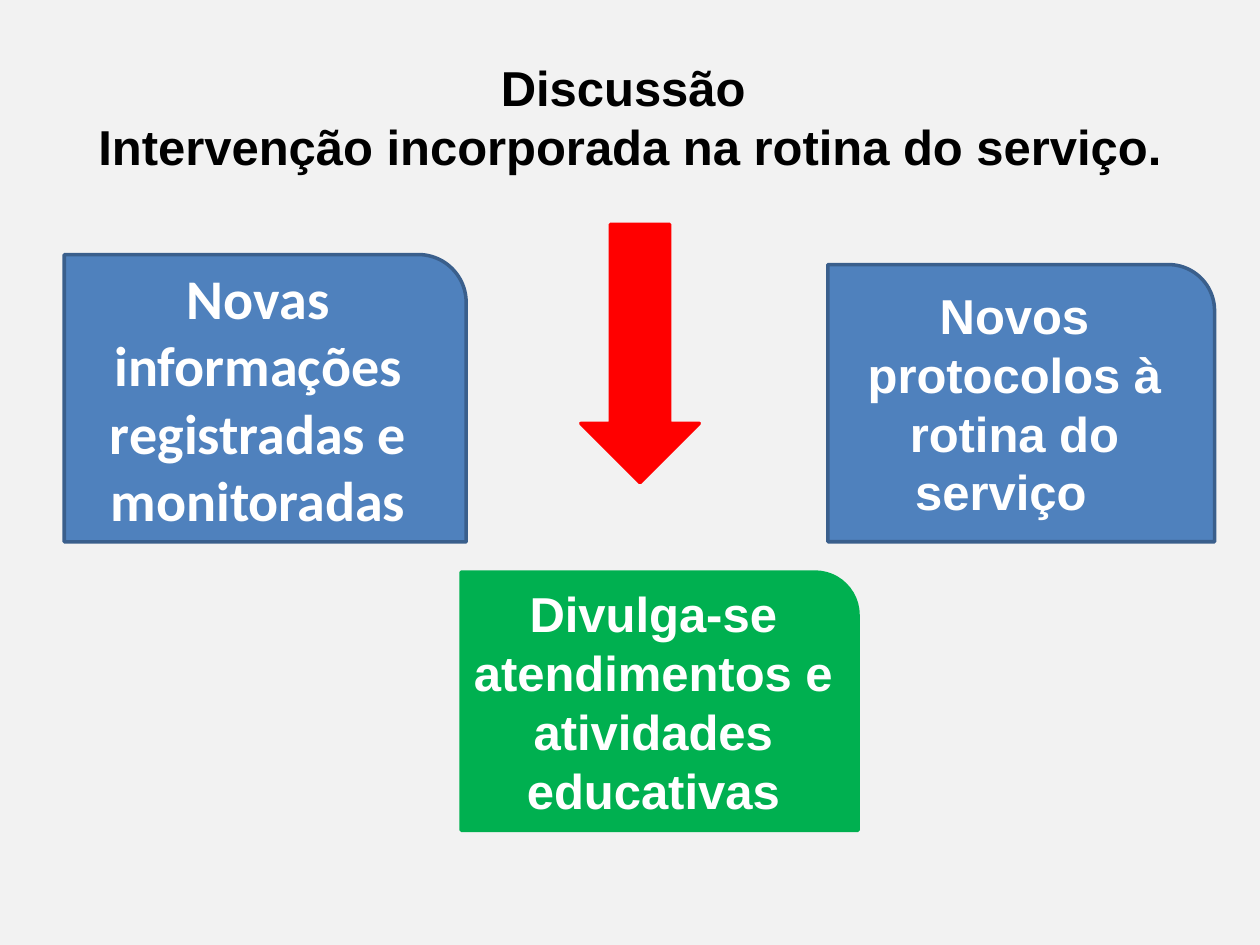
from pptx import Presentation
from pptx.dml.color import RGBColor
from pptx.enum.shapes import MSO_SHAPE
from pptx.enum.text import MSO_ANCHOR, PP_ALIGN
from pptx.util import Inches, Pt

COLORS = {
    "background": "F2F2F2",
    "title": "000000",
    "blue": "4F81BD",
    "blue_line": "3A5F8C",
    "green": "00B050",
    "red": "FF0000",
    "white": "FFFFFF",
}


def color(name):
    return RGBColor.from_string(COLORS[name])


def write_text(shape, lines, text_color, font="Arial", size=28):
    """Fill a shape with bold centred text, one paragraph per line."""
    frame = shape.text_frame
    frame.word_wrap = True
    frame.vertical_anchor = MSO_ANCHOR.MIDDLE
    for index, line in enumerate(lines):
        paragraph = frame.add_paragraph() if index else frame.paragraphs[0]
        paragraph.alignment = PP_ALIGN.CENTER
        run = paragraph.add_run()
        run.text = line
        run.font.name = font
        run.font.size = Pt(size)
        run.font.bold = True
        run.font.color.rgb = color(text_color)


def add_title(slide, lines):
    box = slide.shapes.add_textbox(Inches(0.5), Inches(0.3), Inches(9), Inches(1.25))
    write_text(box, lines, "title")


def add_filled_shape(slide, kind, bounds, fill, line):
    shape = slide.shapes.add_shape(kind, *map(Inches, bounds))
    shape.shadow.inherit = False
    shape.fill.solid()
    shape.fill.fore_color.rgb = color(fill)
    shape.line.color.rgb = color(line)
    shape.line.width = Pt(2)
    return shape


def add_card(slide, bounds, text, fill, line, **font):
    card = add_filled_shape(slide, MSO_SHAPE.ROUND_1_RECTANGLE, bounds, fill, line)
    write_text(card, [text], "white", **font)


def main():
    presentation = Presentation()
    presentation.slide_width = Inches(10)
    presentation.slide_height = Inches(7.5)
    slide = presentation.slides.add_slide(presentation.slide_layouts[6])
    slide.background.fill.solid()
    slide.background.fill.fore_color.rgb = color("background")

    add_title(slide, ["Discussão ", "Intervenção incorporada na rotina do serviço."])
    add_card(slide, (0.51, 2.02, 3.19, 2.28),
             "Novas informações registradas e monitoradas",
             "blue", "blue_line", font="Calibri", size=32)
    add_card(slide, (3.66, 4.54, 3.15, 2.05),
             "Divulga-se atendimentos e atividades educativas", "green", "green")
    add_filled_shape(slide, MSO_SHAPE.DOWN_ARROW, (4.61, 1.78, 0.94, 2.05), "red", "red")
    add_card(slide, (6.57, 2.1, 3.07, 2.2),
             "Novos protocolos à rotina do serviço  ", "blue", "blue_line")

    presentation.save("out.pptx")


if __name__ == "__main__":
    main()
